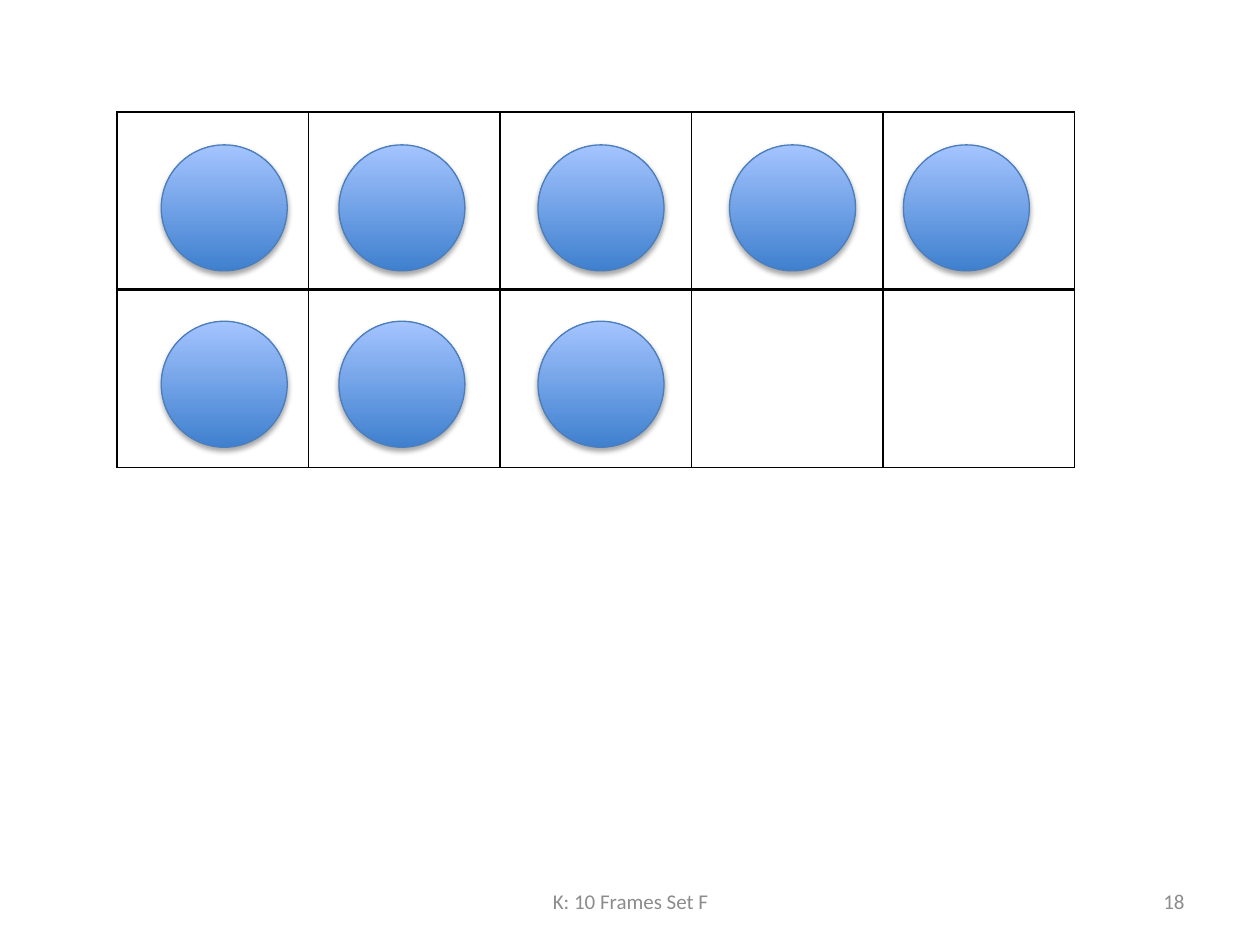
from dataclasses import dataclass

from lxml import etree
from pptx import Presentation
from pptx.dml.color import RGBColor
from pptx.enum.shapes import MSO_SHAPE
from pptx.enum.text import MSO_ANCHOR, PP_ALIGN
from pptx.oxml import parse_xml
from pptx.oxml.ns import nsdecls, qn
from pptx.util import Inches, Pt

ELLIPSE = MSO_SHAPE.OVAL
MIDDLE = MSO_ANCHOR.MIDDLE
CENTER = PP_ALIGN.CENTER
RIGHT = PP_ALIGN.RIGHT


@dataclass(frozen=True)
class Theme:
    """Colours, font and line weights of the slide."""

    font: str = "Calibri"
    footer_size: float = 12
    footer: str = "8C8C8C"
    cell: str = "FFFFFF"
    border: str = "000000"
    thin: float = 1
    thick: float = 2
    counter_bottom: str = "3F80CE"
    counter_top: str = "A4C4FF"
    counter_line: str = "4B7EBC"
    counter_line_width: float = 0.75


THEME = Theme()
ROWS, COLUMNS = 2, 5
CELL_WIDTH, CELL_HEIGHT = 1.52, 1.41
COUNTER_SIZE = 1
COUNTER_ROWS = (
    (1.15, (1.28, 2.69, 4.27, 5.79, 7.17)),
    (2.55, (1.28, 2.69, 4.27)),
)


def set_border(cell, side, width):
    """Give one side of a cell a solid line."""
    line = etree.SubElement(cell._tc.get_or_add_tcPr(), qn(f"a:{side}"), w=str(Pt(width)))
    fill = etree.SubElement(line, qn("a:solidFill"))
    etree.SubElement(fill, qn("a:srgbClr"), val=THEME.border)


def add_ten_frame(page, left, top):
    """Add the empty frame with a heavy line between its rows."""
    frame = page.shapes.add_table(
        ROWS, COLUMNS, Inches(left), Inches(top),
        Inches(COLUMNS * CELL_WIDTH), Inches(ROWS * CELL_HEIGHT),
    )
    table = frame.table
    table.first_row = False
    table.horz_banding = False
    for column in table.columns:
        column.width = Inches(CELL_WIDTH)
    for index, row in enumerate(table.rows):
        row.height = Inches(CELL_HEIGHT)
        top_width = THEME.thick if index else THEME.thin
        bottom_width = THEME.thin if index == ROWS - 1 else THEME.thick
        for cell in row.cells:
            set_border(cell, "lnL", THEME.thin)
            set_border(cell, "lnR", THEME.thin)
            set_border(cell, "lnT", top_width)
            set_border(cell, "lnB", bottom_width)
            cell.fill.solid()
            cell.fill.fore_color.rgb = RGBColor.from_string(THEME.cell)


def add_shadow(shape):
    """Put a soft shadow below a shape."""
    shape._element.spPr.append(parse_xml(
        f'<a:effectLst {nsdecls("a")}>'
        f'<a:outerShdw blurRad="{Pt(3.1)}" dist="{Pt(1.8)}" dir="5400000" rotWithShape="0">'
        '<a:srgbClr val="000000"><a:alpha val="35000"/></a:srgbClr>'
        '</a:outerShdw></a:effectLst>'
    ))


def add_counter(page, left, top):
    """Add one round counter."""
    size = Inches(COUNTER_SIZE)
    counter = page.shapes.add_shape(ELLIPSE, Inches(left), Inches(top), size, size)
    counter.fill.gradient()
    counter.fill.gradient_angle = 90
    colors = (THEME.counter_bottom, THEME.counter_top)
    for position, (stop, color) in enumerate(zip(counter.fill.gradient_stops, colors)):
        stop.position = position
        stop.color.rgb = RGBColor.from_string(color)
    counter.line.color.rgb = RGBColor.from_string(THEME.counter_line)
    counter.line.width = Pt(THEME.counter_line_width)
    add_shadow(counter)


def add_footer(page, text, left, width, alignment):
    """Add one piece of footer text."""
    box = page.shapes.add_textbox(Inches(left), Inches(6.95), Inches(width), Inches(0.4))
    frame = box.text_frame
    frame.word_wrap = True
    frame.vertical_anchor = MIDDLE
    frame.text = text
    para = frame.paragraphs[0]
    para.alignment = alignment
    font = para.runs[0].font
    font.name = THEME.font
    font.size = Pt(THEME.footer_size)
    font.color.rgb = RGBColor.from_string(THEME.footer)


def main():
    """Build and save the ten-frame slide."""
    deck = Presentation()
    deck.slide_width, deck.slide_height = Inches(10), Inches(7.5)
    page = deck.slides.add_slide(deck.slide_layouts[6])
    add_ten_frame(page, 0.93, 0.89)
    add_footer(page, "K: 10 Frames Set F", 3.42, 3.17, CENTER)
    add_footer(page, "18", 7.17, 2.33, RIGHT)
    for top, lefts in COUNTER_ROWS:
        for left in lefts:
            add_counter(page, left, top)
    deck.save("out.pptx")


if __name__ == "__main__":
    main()
